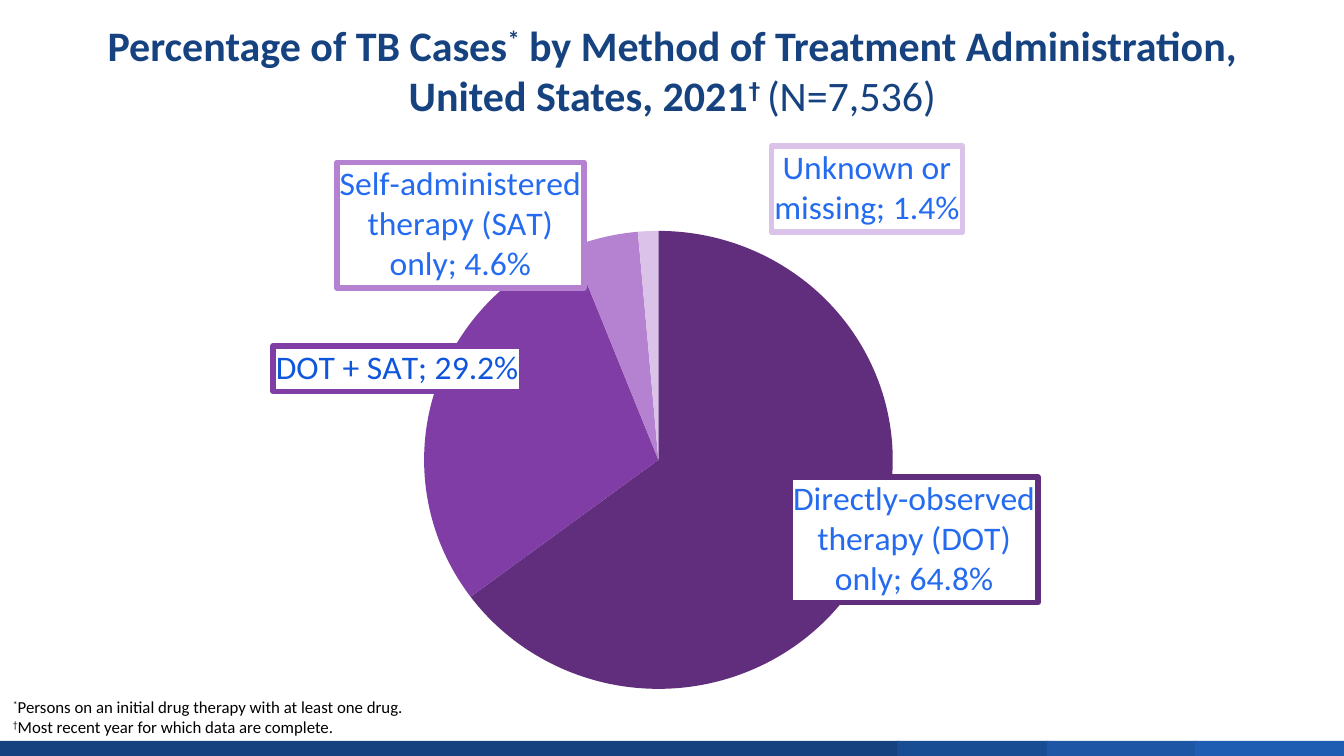
import math
import lxml.etree
import pptx
import pptx.chart.data
import pptx.dml.color
import pptx.enum.chart
import pptx.enum.shapes
import pptx.enum.text
import pptx.util

THEME = {
    "font": "Calibri", "symbol_font": "Karla", "chart_font": "Cabin",
    "title": "164380", "note": "000000", "label": "246BF0", "label_dark": "0F56DC",
    "paper": "FFFFFF", "title_size": 30, "label_size": 24, "note_size": 12,
    "label_border": 4,
}
TITLE = [[
    ("Percentage of TB Cases", {"bold": True}),
    ("*", {"bold": True, "raised": True}),
    (" by Method of Treatment Administration, United States, 2021", {"bold": True}),
    ("† ", {"bold": True, "raised": True, "font": THEME["symbol_font"]}),
    ("(N=7,536)", {}),
]]
FOOTNOTES = [
    [("*", {"raised": True}), ("Persons on an initial drug therapy with at least one drug.", {})],
    [("†", {"raised": True}), ("Most recent year for which data are complete.", {})],
]
# category, percent, slice colour, label colour, label centre, label size
METHODS = [
    ("Directly-observed therapy (DOT) only", 64.8, "602E7C", "label", (9.09, 5.28), (2.5, 1.2)),
    ("DOT + SAT", 29.2, "803DA5", "label_dark", (3.92, 3.6), (2.5, 0.42)),
    ("Self-administered therapy (SAT) only", 4.6, "B482D0", "label", (4.54, 2.16), (2.5, 1.2)),
    ("Unknown or missing", 1.4, "DAC2E8", "label", (8.6, 1.78), (1.95, 0.82)),
]
FOOTER_BANDS = [(0, 8.92, "164380"), (8.9, 1.5, "194D93"), (10.38, 1.49, "1C56A4"), (11.85, 1.48, "1E5DB2")]
CHART_BOX = (0.43, 1.05, 12.71, 5.96)
PLOT = {"x": 0.29, "y": 0.19, "w": 0.38, "h": 0.78}
LABEL_GAP = 0.06
CHART_NS = "http://schemas.openxmlformats.org/drawingml/2006/chart"
NAMESPACES = (
    f'xmlns:c="{CHART_NS}" xmlns:a="http://schemas.openxmlformats.org/drawingml/2006/main" '
    'xmlns:c15="http://schemas.microsoft.com/office/drawing/2012/chart"'
)


def color(value):
    return pptx.dml.color.RGBColor.from_string(value)


def add_text(slide, lines, box, *, size, ink, align, anchor, space_before=0):
    frame = slide.shapes.add_textbox(*map(pptx.util.Inches, box)).text_frame
    frame.word_wrap = True
    frame.vertical_anchor = anchor
    for number, pieces in enumerate(lines):
        paragraph = frame.paragraphs[0] if number == 0 else frame.add_paragraph()
        paragraph.alignment = align
        paragraph.space_before = pptx.util.Pt(space_before if number == 0 else 0)
        for words, style in pieces:
            run = paragraph.add_run()
            run.text = words
            run.font.name = style.get("font", THEME["font"])
            run.font.size = pptx.util.Pt(size)
            run.font.bold = style.get("bold", False)
            run.font.color.rgb = color(ink)
            if style.get("raised"):
                run.font._element.set("baseline", "30000")


def add_footer(slide):
    for left, width, fill in FOOTER_BANDS:
        band = slide.shapes.add_shape(
            pptx.enum.shapes.MSO_SHAPE.RECTANGLE,
            *map(pptx.util.Inches, (left, 7.35, width, 0.15)))
        band.shadow.inherit = False
        band.fill.solid()
        band.fill.fore_color.rgb = color(fill)
        band.line.fill.background()


def label_shift(method, start):
    _, percent, _, _, target, size = method
    left, top, width, height = CHART_BOX
    reach = min(PLOT["w"] * width, PLOT["h"] * height) / 2 + LABEL_GAP
    angle = 2 * math.pi * (start + percent / 2) / 100
    across, up = math.sin(angle), math.cos(angle)
    near_vertical = abs(across) < math.sin(math.radians(5))
    side = 0 if near_vertical else math.copysign(size[0] / 2, across)
    rest_x = left + (PLOT["x"] + PLOT["w"] / 2) * width + reach * across + side
    rest_y = top + (PLOT["y"] + PLOT["h"] / 2) * height - reach * up - math.copysign(size[1] / 2, up)
    return (target[0] - rest_x) / width, (target[1] - rest_y) / height


def label_xml(index, method, start):
    _, _, border, ink, _, size = method
    shift_x, shift_y = label_shift(method, start)
    return f'''<c:dLbl {NAMESPACES}><c:idx val="{index}"/>
<c:layout><c:manualLayout><c:x val="{shift_x:.4f}"/><c:y val="{shift_y:.4f}"/></c:manualLayout></c:layout>
<c:numFmt formatCode="0.0&quot;%&quot;" sourceLinked="0"/>
<c:spPr><a:solidFill><a:srgbClr val="{THEME["paper"]}"/></a:solidFill>
<a:ln w="{THEME["label_border"] * 12700}"><a:solidFill><a:srgbClr val="{border}"/></a:solidFill></a:ln></c:spPr>
<c:txPr><a:bodyPr wrap="square" anchor="ctr"/><a:p><a:pPr algn="ctr">
<a:defRPr sz="{THEME["label_size"] * 100}" b="0"><a:solidFill><a:srgbClr val="{THEME[ink]}"/></a:solidFill>
<a:latin typeface="{THEME["font"]}"/></a:defRPr></a:pPr><a:endParaRPr lang="en-US"/></a:p></c:txPr>
<c:dLblPos val="bestFit"/><c:showLegendKey val="0"/><c:showVal val="1"/><c:showCatName val="1"/>
<c:showSerName val="0"/><c:showPercent val="0"/><c:showBubbleSize val="0"/><c:separator>; </c:separator>
<c:extLst><c:ext uri="{{CE6537A1-D6FC-4f65-9D91-7224C49458BB}}"><c15:layout><c:manualLayout>
<c:w val="{size[0] / CHART_BOX[2]:.4f}"/><c:h val="{size[1] / CHART_BOX[3]:.4f}"/>
</c:manualLayout></c15:layout></c:ext></c:extLst></c:dLbl>'''


def add_pie(slide):
    treatment = pptx.chart.data.CategoryChartData(number_format='0.0"%"')
    treatment.categories = [method[0] for method in METHODS]
    treatment.add_series("Series 1", [method[1] for method in METHODS])
    pie = slide.shapes.add_chart(
        pptx.enum.chart.XL_CHART_TYPE.PIE,
        *map(pptx.util.Inches, CHART_BOX), treatment).chart
    pie.has_legend = False
    pie.has_title = False
    pie.font.name = THEME["chart_font"]
    pie.font.size = pptx.util.Pt(10)
    pie.font.color.rgb = color(THEME["label_dark"])
    plot = pie.plots[0]
    plot.vary_by_categories = True
    series = plot.series[0]
    labels = series.data_labels
    labels.show_value = True
    labels.show_category_name = True
    labels.show_percentage = False
    labels.number_format = '0.0"%"'
    labels.number_format_is_linked = False
    labels.font.name = THEME["font"]
    labels.font.size = pptx.util.Pt(THEME["label_size"])
    labels.font.color.rgb = color(THEME["label"])
    start = 0
    for index, method in enumerate(METHODS):
        wedge = series.points[index].format
        wedge.fill.solid()
        wedge.fill.fore_color.rgb = color(method[2])
        wedge.line.fill.background()
        labels._element.insert(index, lxml.etree.fromstring(label_xml(index, method, start)))
        start += method[1]
    hide_leader_lines(labels._element)
    place_plot(pie)


def hide_leader_lines(labels):
    for leader_lines in labels.findall(f"{{{CHART_NS}}}showLeaderLines"):
        labels.remove(leader_lines)
    labels.append(lxml.etree.fromstring(f'<c:showLeaderLines {NAMESPACES} val="0"/>'))


def place_plot(pie):
    area = pie._chartSpace.find(f".//{{{CHART_NS}}}plotArea")
    for layout in area.findall(f"{{{CHART_NS}}}layout"):
        area.remove(layout)
    edges = "".join(f'<c:{key} val="{value}"/>' for key, value in PLOT.items())
    area.insert(0, lxml.etree.fromstring(
        f'<c:layout {NAMESPACES}><c:manualLayout><c:layoutTarget val="inner"/>'
        f'<c:xMode val="edge"/><c:yMode val="edge"/>{edges}</c:manualLayout></c:layout>'))


def main():
    deck = pptx.Presentation()
    deck.slide_width = pptx.util.Inches(13.33)
    deck.slide_height = pptx.util.Inches(7.5)
    slide = deck.slides.add_slide(deck.slide_layouts[6])
    add_footer(slide)
    add_text(slide, TITLE, (0.67, 0.18, 12, 1.06), size=THEME["title_size"], ink=THEME["title"],
             align=pptx.enum.text.PP_ALIGN.CENTER, anchor=pptx.enum.text.MSO_ANCHOR.BOTTOM)
    add_pie(slide)
    add_text(slide, FOOTNOTES, (0.03, 6.86, 13.3, 0.49), size=THEME["note_size"], ink=THEME["note"],
             align=pptx.enum.text.PP_ALIGN.LEFT, anchor=pptx.enum.text.MSO_ANCHOR.TOP, space_before=2.4)
    deck.save("out.pptx")


if __name__ == "__main__":
    main()
